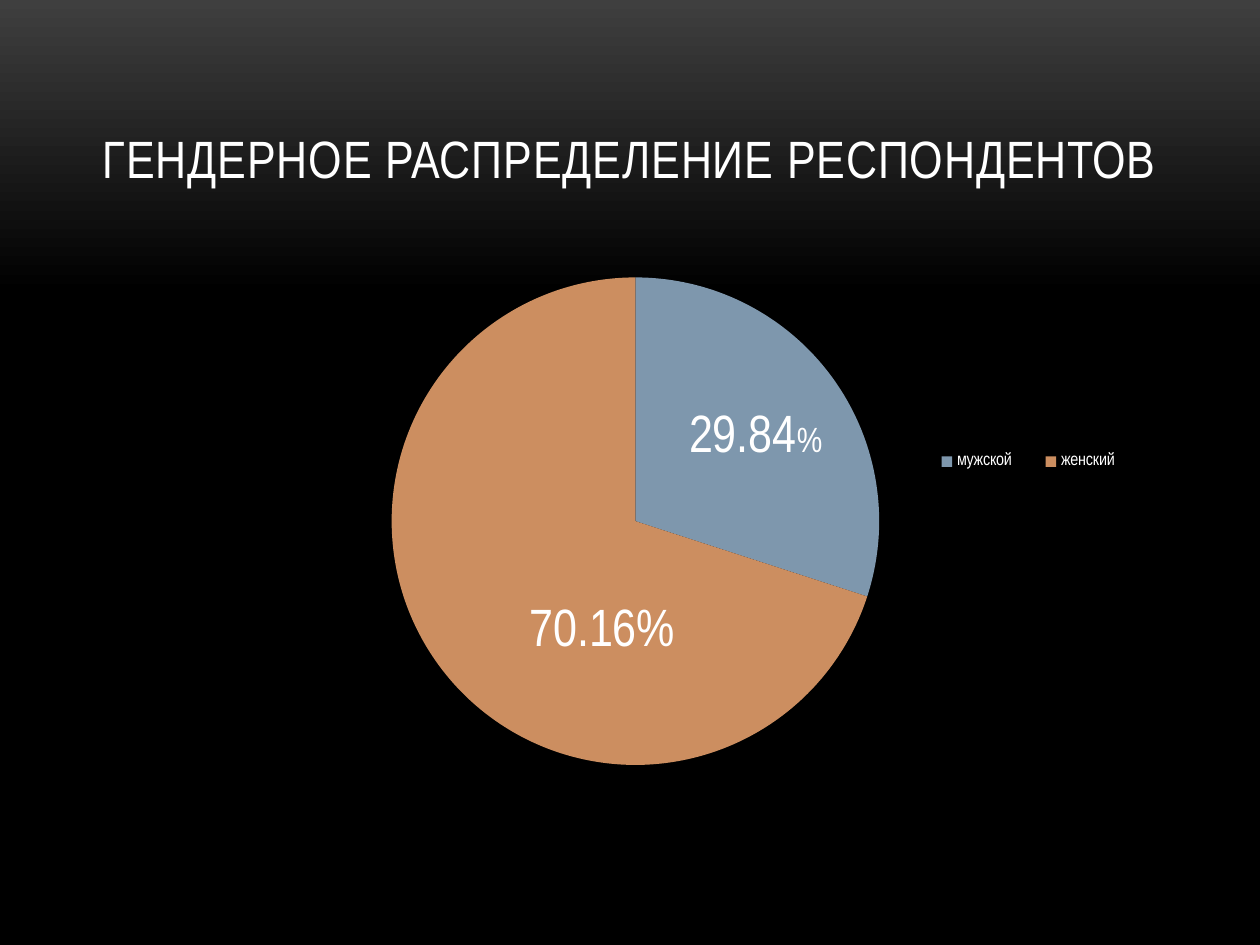
"""Build a slide with a pie chart of respondents by gender."""
from copy import deepcopy

from lxml.etree import SubElement
from pptx import Presentation
from pptx.chart.data import CategoryChartData
from pptx.dml.color import RGBColor
from pptx.enum.chart import XL_CHART_TYPE, XL_LABEL_POSITION, XL_LEGEND_POSITION
from pptx.enum.text import MSO_ANCHOR, PP_ALIGN
from pptx.oxml.ns import qn
from pptx.util import Cm, Pt

WHITE = RGBColor(0xFF, 0xFF, 0xFF)
BLACK = RGBColor(0x00, 0x00, 0x00)
GRAPHITE = RGBColor(0x3F, 0x3F, 0x3F)
BLUE = RGBColor(0x7E, 0x97, 0xAD)
ORANGE = RGBColor(0xCC, 0x8E, 0x60)
FONT = "Arial Narrow"


def add_text(paragraph, text, size=30, color=WHITE, spacing=None):
    run = paragraph.add_run()
    run.text = text
    run.font.name = FONT
    run.font.size = Pt(size)
    run.font.color.rgb = color
    if spacing:
        run.font._element.set("spc", str(spacing))


def place(parent, previous, **settings):
    for old in parent.findall(qn("c:layout")):
        parent.remove(old)
    layout = SubElement(parent, qn("c:layout"))
    manual = SubElement(layout, qn("c:manualLayout"))
    for tag, value in settings.items():
        SubElement(manual, qn(f"c:{tag}")).set("val", str(value))
    if previous is None:
        parent.insert(0, layout)
    else:
        previous.addnext(layout)


deck = Presentation()
deck.slide_width, deck.slide_height = Cm(25.4), Cm(19.05)
slide = deck.slides.add_slide(deck.slide_layouts[6])

backdrop = slide.background.fill
backdrop.gradient()
backdrop.gradient_angle = 270
top_stop, fade_stop = backdrop.gradient_stops
top_stop.color.rgb, top_stop.position = GRAPHITE, 0
fade_stop.color.rgb, fade_stop.position = BLACK, 0.31
stops = slide.background._cSld.find(f".//{qn('a:gsLst')}")
stops.append(deepcopy(stops[-1]))
stops[-1].set("pos", "100000")

heading = slide.shapes.add_textbox(Cm(1.7), Cm(0.76), Cm(22), Cm(3.18)).text_frame
heading.word_wrap = True
heading.vertical_anchor = MSO_ANCHOR.BOTTOM
heading.paragraphs[0].alignment = PP_ALIGN.CENTER
add_text(heading.paragraphs[0], "ГЕНДЕРНОЕ РАСПРЕДЕЛЕНИЕ РЕСПОНДЕНТОВ", spacing=50)

gender_data = CategoryChartData()
gender_data.categories = ["мужской", "женский"]
gender_data.add_series("Series 1", [30, 70])
gender_chart = slide.shapes.add_chart(
    XL_CHART_TYPE.PIE, Cm(1.7), Cm(4.45), Cm(22), Cm(11.43), gender_data
).chart
gender_chart.has_title = False
gender_chart.font.name = FONT
gender_chart.font.size = Pt(10)
gender_chart.font.color.rgb = WHITE

gender_chart.has_legend = True
legend = gender_chart.legend
legend.position = XL_LEGEND_POSITION.TOP
legend.include_in_layout = False
place(legend._element, legend._element.find(qn("c:legendPos")),
      xMode="edge", yMode="edge", x=0.76, y=0.39, w=0.21, h=0.07)

plot = gender_chart.plots[0]
plot.vary_by_categories = True
place(gender_chart._chartSpace.chart.plotArea, None, layoutTarget="inner",
      xMode="edge", yMode="edge", x=0.28, y=0.1, w=0.45, h=0.86)

slices = [
    (BLUE, [("29.84", 30), ("%", 20)], 0.02, -0.02),
    (ORANGE, [("70.16%", 30)], 0.06, 0.07),
]
for index, (color, pieces, shift_x, shift_y) in enumerate(slices):
    point = plot.series[0].points[index]
    point.format.fill.solid()
    point.format.fill.fore_color.rgb = color
    point.format.line.fill.background()
    label = point.data_label
    share = label.text_frame.paragraphs[0]
    for text, size in pieces:
        add_text(share, text, size=size)
    label.position = XL_LABEL_POSITION.CENTER
    label_xml = label._dLbl
    place(label_xml, label_xml.find(qn("c:idx")), x=shift_x, y=shift_y)

deck.save("out.pptx")
